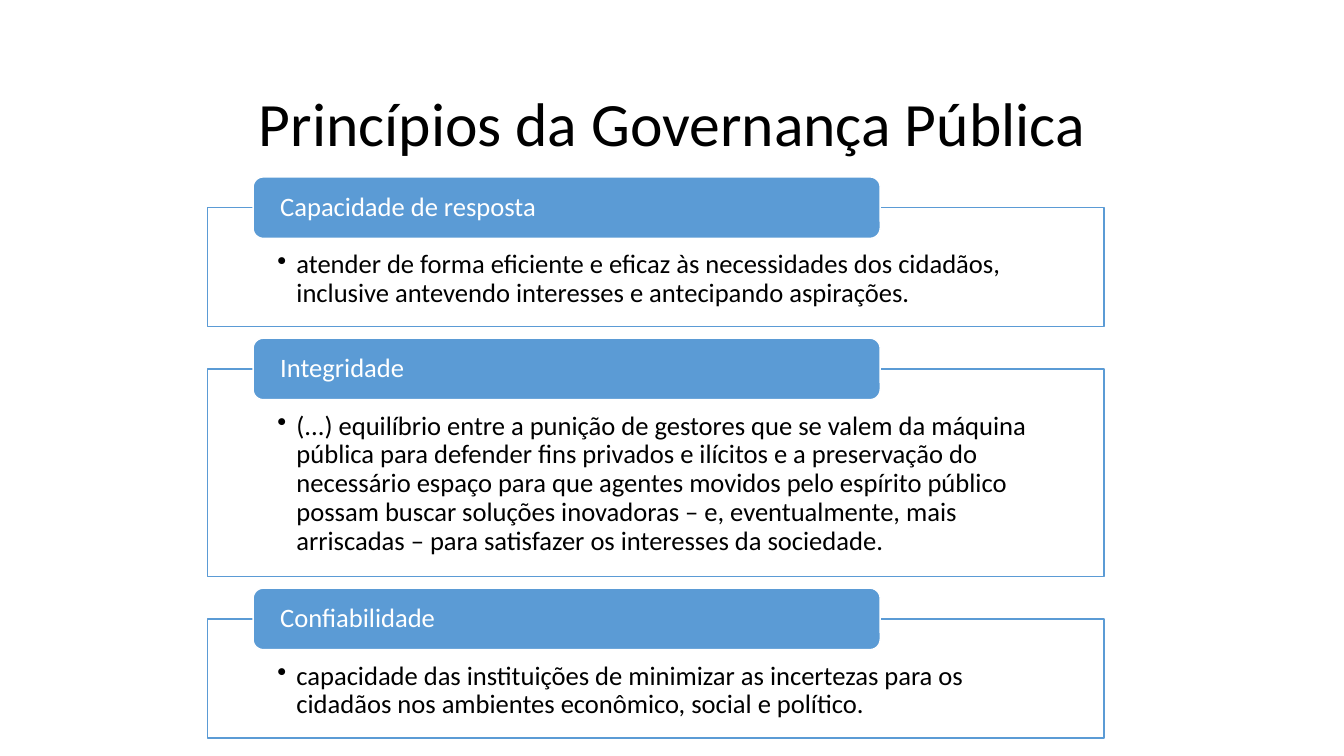
import pptx
import pptx.util
import pptx.dml.color
import pptx.enum.shapes
import pptx.enum.text
import pptx.oxml.ns
from lxml import etree

TITLE = "Princípios da Governança Pública"
PRINCIPLES = [
    ("Capacidade de resposta", 1.18,
     "atender de forma eficiente e eficaz às necessidades dos cidadãos, "
     "inclusive antevendo interesses e antecipando aspirações."),
    ("Integridade", 2.06,
     "(...) equilíbrio entre a punição de gestores que se valem da máquina "
     "pública para defender fins privados e ilícitos e a preservação do "
     "necessário espaço para que agentes movidos pelo espírito público possam "
     "buscar soluções inovadoras – e, eventualmente, mais arriscadas – para "
     "satisfazer os interesses da sociedade."),
    ("Confiabilidade", 1.18,
     "capacidade das instituições de minimizar as incertezas para os cidadãos "
     "nos ambientes econômico, social e político."),
]
COLORS = {"blue": "5B9BD5", "white": "FFFFFF", "black": "000000"}
FONT = "Calibri"
PANEL_LEFT, PANEL_TOP, PANEL_WIDTH, PANEL_GAP = 2.06, 2.06, 8.89, 0.42
HEADER_LEFT, HEADER_WIDTH, HEADER_HEIGHT = 2.51, 6.22, 0.61
HEADER_RISE = HEADER_HEIGHT / 2

Inches = pptx.util.Inches
Align = pptx.enum.text.PP_ALIGN
Anchor = pptx.enum.text.MSO_ANCHOR
Preset = pptx.enum.shapes.MSO_SHAPE


def color(name):
    return pptx.dml.color.RGBColor.from_string(COLORS[name])


def write_text(shape, text, size=19, ink="black", align=Align.LEFT,
               anchor=Anchor.TOP, insets=(0, 0, 0, 0), bullet=False):
    frame = shape.text_frame
    frame.word_wrap = True
    frame.auto_size = pptx.enum.text.MSO_AUTO_SIZE.NONE
    frame.vertical_anchor = anchor
    (frame.margin_left, frame.margin_top,
     frame.margin_right, frame.margin_bottom) = map(Inches, insets)
    paragraph = frame.paragraphs[0]
    paragraph.text = text
    paragraph.alignment = align
    paragraph.line_spacing = 0.9
    paragraph.space_before = pptx.util.Pt(0)
    if bullet:
        properties = paragraph._p.get_or_add_pPr()
        properties.set("marL", str(Inches(0.19)))
        properties.set("indent", str(Inches(-0.19)))
        mark = etree.SubElement(properties, pptx.oxml.ns.qn("a:buChar"))
        mark.set("char", "•")
    font = paragraph.runs[0].font
    font.name = FONT
    font.size = pptx.util.Pt(size)
    font.color.rgb = color(ink)


def add_box(slide, preset, left, top, width, height, fill, line):
    shape = slide.shapes.add_shape(
        preset, Inches(left), Inches(top), Inches(width), Inches(height))
    shape.shadow.inherit = False
    shape.fill.solid()
    shape.fill.fore_color.rgb = color(fill)
    shape.line.color.rgb = color(line)
    shape.line.width = pptx.util.Pt(1)
    return shape


def set_opacity(shape, percent):
    tone = shape._element.spPr.find(".//" + pptx.oxml.ns.qn("a:srgbClr"))
    alpha = etree.SubElement(tone, pptx.oxml.ns.qn("a:alpha"))
    alpha.set("val", str(percent * 1000))


def main():
    presentation = pptx.Presentation()
    presentation.slide_width = Inches(13.33)
    presentation.slide_height = Inches(7.5)
    slide = presentation.slides.add_slide(presentation.slide_layouts[5])

    title = slide.shapes.title
    title.left, title.top = Inches(0.92), Inches(0.87)
    title.width, title.height = Inches(11.5), Inches(1.45)
    write_text(title, TITLE, size=44, align=Align.CENTER,
               insets=(0.1, 0.06, 0.1, 0.05))

    top = PANEL_TOP
    for name, height, description in PRINCIPLES:
        panel = add_box(slide, Preset.RECTANGLE, PANEL_LEFT, top,
                        PANEL_WIDTH, height, "white", "blue")
        set_opacity(panel, 90)
        write_text(panel, description, insets=(0.69, 0.43, 0.69, 0.15),
                   bullet=True)
        header = add_box(slide, Preset.ROUNDED_RECTANGLE, HEADER_LEFT,
                         top - HEADER_RISE, HEADER_WIDTH, HEADER_HEIGHT,
                         "blue", "white")
        write_text(header, name, ink="white", anchor=Anchor.MIDDLE,
                   insets=(0.24, 0, 0.24, 0))
        top += height + PANEL_GAP

    presentation.save("out.pptx")


if __name__ == "__main__":
    main()
